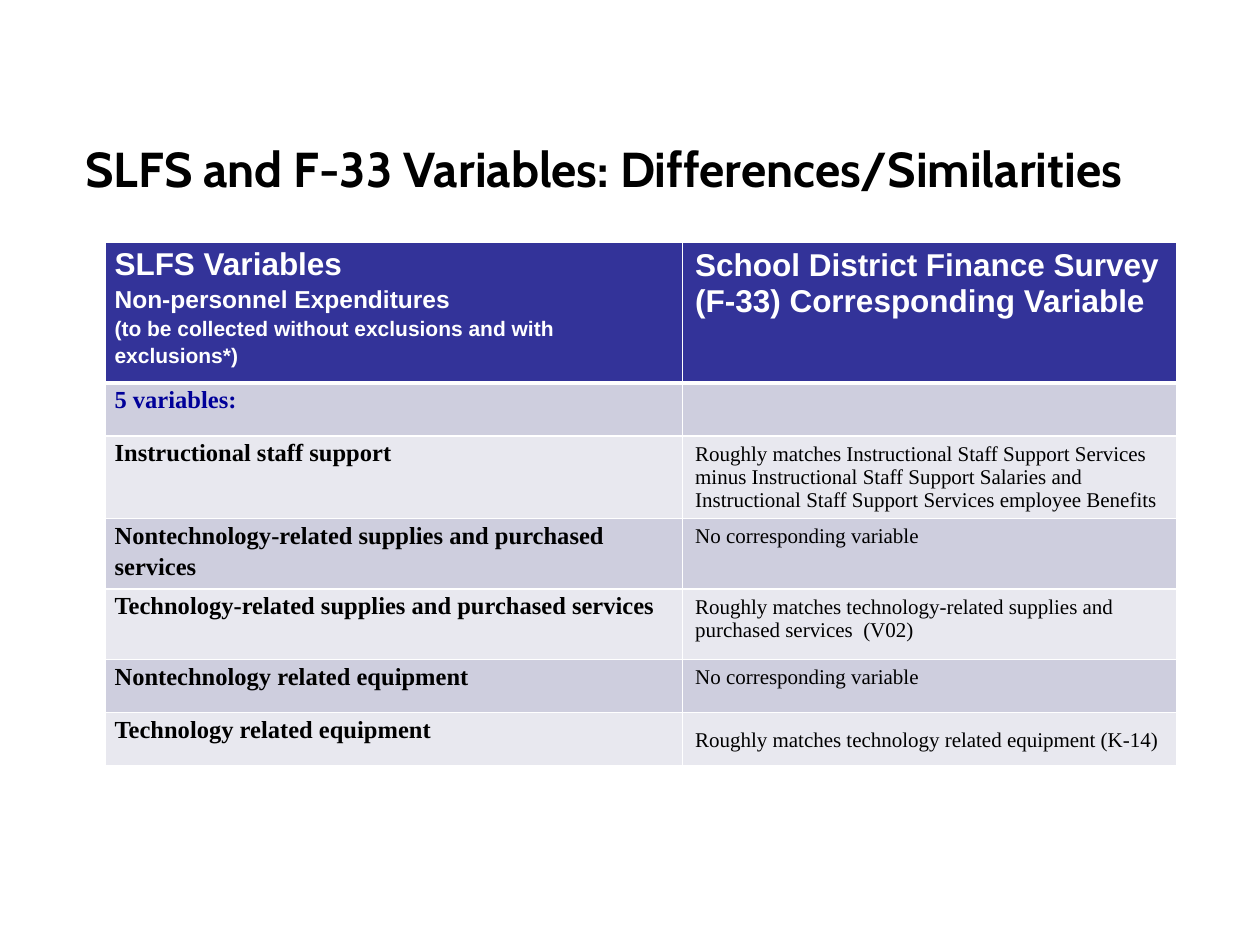
"""Build a slide that sets SLFS variables beside their F-33 matches."""
from dataclasses import dataclass

import lxml.etree
import pptx
import pptx.dml.color
import pptx.enum.text
import pptx.oxml.ns
import pptx.util

Cm = pptx.util.Cm
Pt = pptx.util.Pt
RGBColor = pptx.dml.color.RGBColor

BLACK = RGBColor(0x00, 0x00, 0x00)
WHITE = RGBColor(0xFF, 0xFF, 0xFF)
NAVY = RGBColor(0x00, 0x00, 0x99)
INDIGO = RGBColor(0x33, 0x33, 0x99)
BANDS = (RGBColor(0xCE, 0xCE, 0xDE), RGBColor(0xE8, 0xE8, 0xEF))

SANS = "Arial"
SERIF = "Times New Roman"
WIDTHS = (11.63, 9.96)


@dataclass
class Style:
    size: int
    face: str = SERIF
    color: RGBColor = BLACK
    bold: bool = True


@dataclass
class Line:
    text: str
    style: Style


@dataclass
class Row:
    height: float
    left: list[Line]
    right: list[Line]


ITEM = Style(14)
NOTE = Style(12, bold=False)
HEAD = Style(18, SANS, WHITE)
ROWS = [
    Row(2.84,
        [Line("SLFS Variables", HEAD),
         Line("Non-personnel Expenditures", Style(14, SANS, WHITE)),
         Line("(to be collected without exclusions and with exclusions*)", Style(12, SANS, WHITE))],
        [Line("School District Finance Survey (F-33) Corresponding Variable", HEAD)]),
    Row(1.07, [Line("5 variables:", Style(14, color=NAVY))], []),
    Row(1.65, [Line("Instructional staff support", ITEM)],
        [Line("Roughly matches Instructional Staff Support Services minus Instructional Staff "
              "Support Salaries and Instructional Staff Support Services employee Benefits", NOTE)]),
    Row(1.42, [Line("Nontechnology-related supplies and purchased services", ITEM)],
        [Line("No corresponding variable", NOTE)]),
    Row(1.42, [Line("Technology-related supplies and purchased services", ITEM)],
        [Line("Roughly matches technology-related supplies and purchased services  (V02)", NOTE)]),
    Row(1.07, [Line("Nontechnology related equipment", ITEM)],
        [Line("No corresponding variable", NOTE)]),
    Row(1.07, [Line("Technology related equipment", ITEM)],
        [Line("Roughly matches technology related equipment (K-14)", NOTE)]),
]


def format_run(run, style: Style) -> None:
    font = run.font
    font.size = Pt(style.size)
    font.name = style.face
    font.bold = style.bold
    font.color.rgb = style.color


def write(frame, lines: list[Line], gap: float) -> None:
    frame.text = "\n".join(line.text for line in lines)
    for para, line in zip(frame.paragraphs, lines):
        para.line_spacing = gap
        for run in para.runs:
            format_run(run, line.style)


def edge(cell, widths: dict[str, int]) -> None:
    props = cell._tc.get_or_add_tcPr()
    qn = pptx.oxml.ns.qn
    for spot, (side, width) in enumerate(widths.items()):
        line = lxml.etree.Element(qn(f"a:ln{side}"), w=str(Pt(width)))
        fill = lxml.etree.SubElement(line, qn("a:solidFill"))
        lxml.etree.SubElement(fill, qn("a:srgbClr"), val=str(WHITE))
        props.insert(spot, line)


def add_grid(slide, rows: list[Row]) -> None:
    high = sum(row.height for row in rows)
    shape = slide.shapes.add_table(len(rows), len(WIDTHS), Cm(2.13), Cm(4.88),
                                   Cm(sum(WIDTHS)), Cm(high))
    table = shape.table
    for col, width in zip(table.columns, WIDTHS):
        col.width = Cm(width)
    for num, row in enumerate(rows):
        table.rows[num].height = Cm(row.height)
        for side, lines in enumerate((row.left, row.right)):
            cell = table.cell(num, side)
            cell.fill.solid()
            cell.fill.fore_color.rgb = BANDS[(num - 1) % 2] if num else INDIGO
            edge(cell, {"L": 1, "R": 1, "T": 3 if num == 1 else 1, "B": 1 if num else 3})
            if side == 0:
                cell.margin_left = cell.margin_right = Cm(0.18)
                cell.margin_top = cell.margin_bottom = 0
            write(cell.text_frame, lines, 1 if side else 1.15)
    tail = table.cell(len(rows) - 1, 1).text_frame.paragraphs[0].add_run()
    tail.text = " "
    format_run(tail, Style(18, SANS, bold=False))


def add_title(slide, text: str) -> None:
    title = slide.shapes.title
    title.left, title.top = Cm(1.47), Cm(2.74)
    title.width, title.height = Cm(23.29), Cm(1.27)
    frame = title.text_frame
    frame.vertical_anchor = pptx.enum.text.MSO_ANCHOR.MIDDLE
    write(frame, [Line(text, Style(28, "Cabin"))], 1)
    frame.paragraphs[0].alignment = pptx.enum.text.PP_ALIGN.LEFT


def main() -> None:
    deck = pptx.Presentation()
    deck.slide_width, deck.slide_height = Cm(25.4), Cm(19.05)
    slide = deck.slides.add_slide(deck.slide_layouts[5])
    add_title(slide, "SLFS and F-33 Variables: Differences/Similarities")
    add_grid(slide, ROWS)
    deck.save("out.pptx")


if __name__ == "__main__":
    main()
